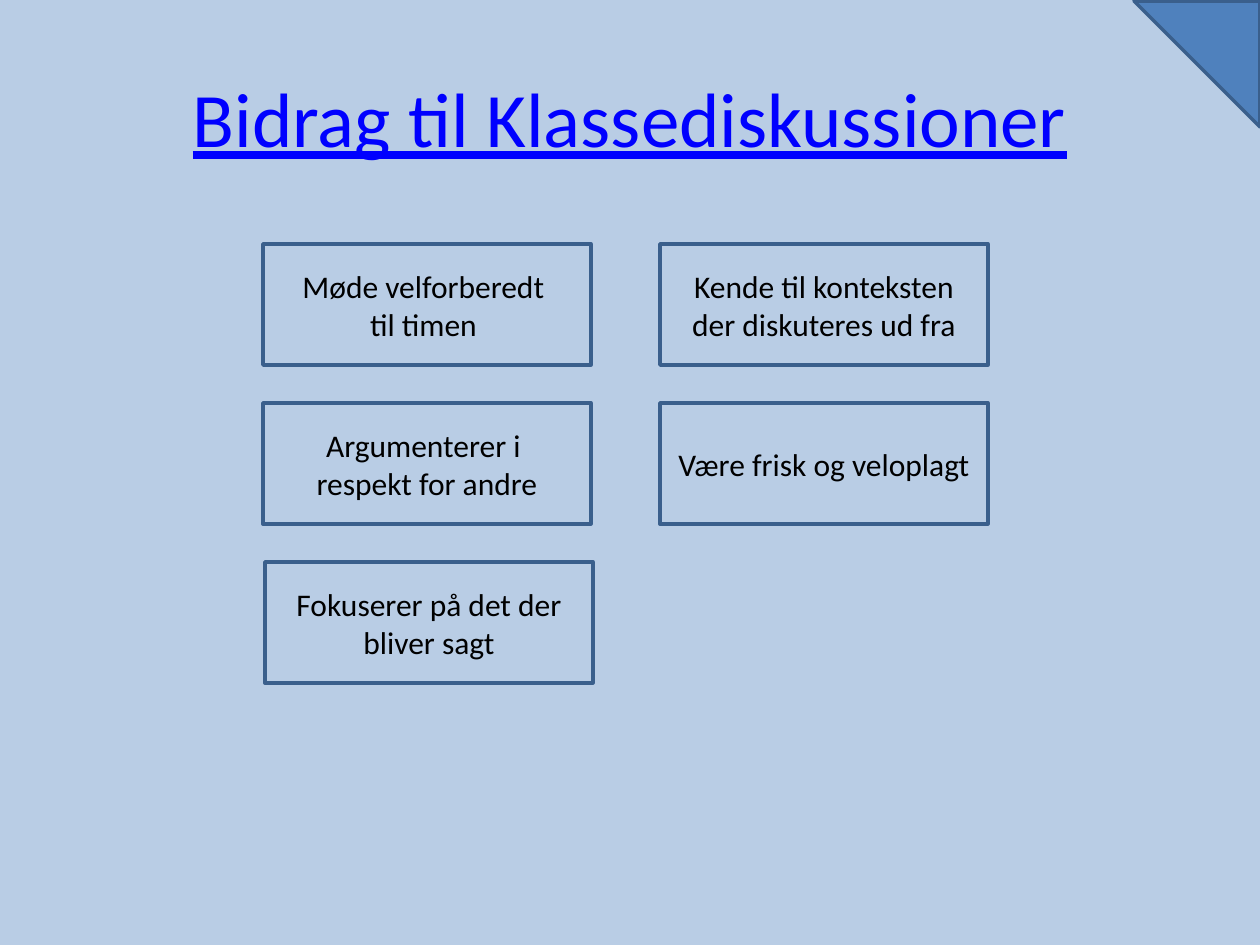
from pptx import Presentation
from pptx.dml.color import RGBColor
from pptx.enum.shapes import MSO_SHAPE
from pptx.enum.text import MSO_ANCHOR, PP_ALIGN
from pptx.util import Pt

RECT, TRIANGLE = MSO_SHAPE.RECTANGLE, MSO_SHAPE.RIGHT_TRIANGLE
MIDDLE, CENTER = MSO_ANCHOR.MIDDLE, PP_ALIGN.CENTER

# Content: (column, row, lines)
TITLE = "Bidrag til Klassediskussioner"
BOXES = [
    (0, 0, ["Møde velforberedt ", "til timen "]),
    (0, 1, ["Argumenterer i ", "respekt for andre"]),
    (1, 1, ["Være frisk og veloplagt"]),
    (1, 0, ["Kende til konteksten der diskuteres ud fra"]),
    (0, 2, ["Fokuserer på det der bliver sagt"]),
]
COLORS = {"back": "B9CDE5", "line": "3A5F8C", "corner": "4F81BD",
          "title": "0000FF", "text": "000000"}
FONT = "Calibri"

# Layout in px
EMU_PER_PX = 914400 // 126
SLIDE_W, SLIDE_H = 1260, 945
TITLE_BOX = (63, 38, 1134, 157)
GRID_X, GRID_Y = 263, 244
BOX_W, BOX_H = 328, 121
STEP_X, STEP_Y = 397, 159
LAST_ROW_SHIFT = 2
CORNER = 126


def px(*values):
    return [v * EMU_PER_PX for v in values]


def rgb(name):
    return RGBColor.from_string(COLORS[name])


def write(tf, lines, size, color, underline=None):
    tf.text = "\n".join(lines)
    tf.word_wrap = True
    tf.vertical_anchor = MIDDLE
    for p in tf.paragraphs:
        p.alignment = CENTER
        for r in p.runs:
            r.font.name = FONT
            r.font.size = Pt(size)
            r.font.color.rgb = rgb(color)
            r.font.underline = underline


def add_shape(s, kind, box, fill):
    sp = s.shapes.add_shape(kind, *px(*box))
    sp.shadow.inherit = False
    sp.fill.solid()
    sp.fill.fore_color.rgb = rgb(fill)
    sp.line.color.rgb = rgb("line")
    sp.line.width = Pt(2)
    return sp


prs = Presentation()
prs.slide_width, prs.slide_height = px(SLIDE_W, SLIDE_H)
s = prs.slides.add_slide(prs.slide_layouts[5])
s.background.fill.solid()
s.background.fill.fore_color.rgb = rgb("back")

# Title
title = s.shapes.title
title.left, title.top, title.width, title.height = px(*TITLE_BOX)
write(title.text_frame, [TITLE], 44, "title", underline=True)

# Boxes
for col, row, lines in BOXES:
    shift = LAST_ROW_SHIFT if row == 2 else 0
    box = (GRID_X + col * STEP_X + shift, GRID_Y + row * STEP_Y, BOX_W, BOX_H)
    sp = add_shape(s, RECT, box, "back")
    write(sp.text_frame, lines, 18, "text")

# Corner triangle
corner = add_shape(s, TRIANGLE, (SLIDE_W - CORNER, 1, CORNER, CORNER), "corner")
corner.rotation = 180

prs.save("out.pptx")
